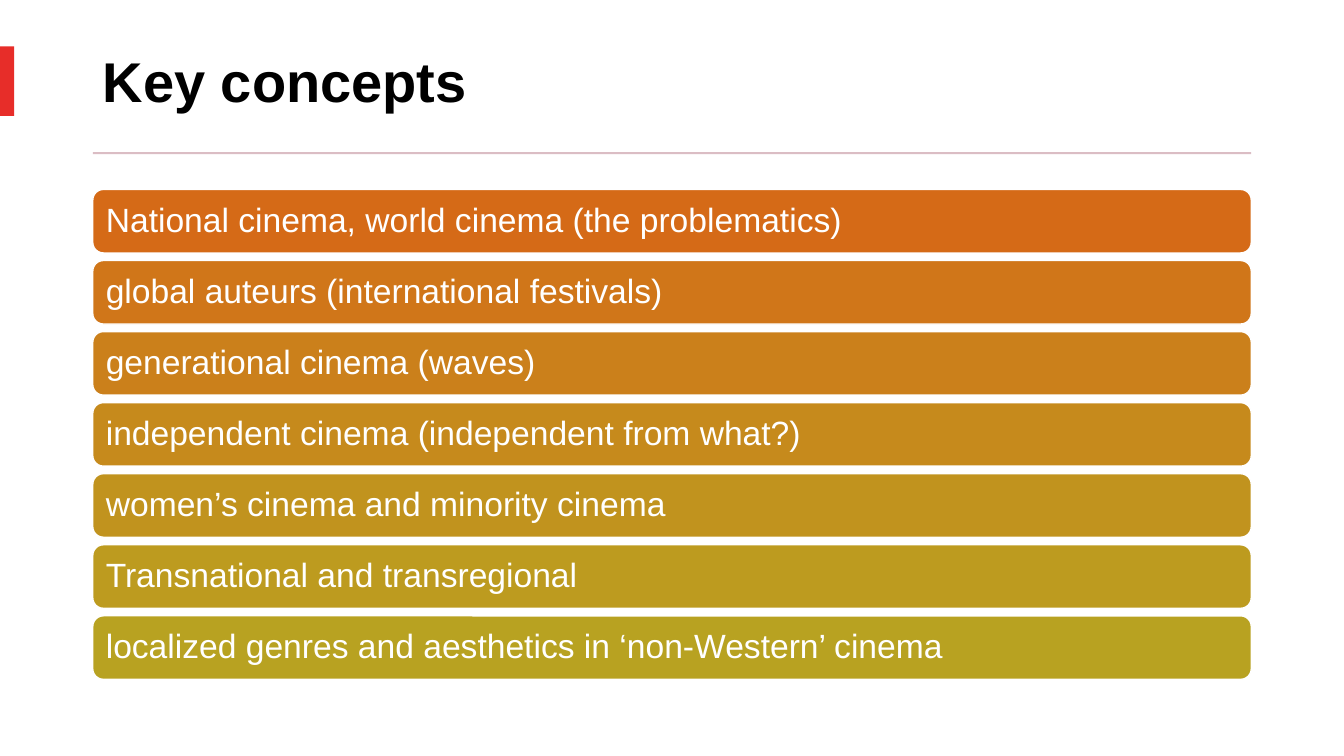
from pptx import Presentation
from pptx.dml.color import RGBColor
from pptx.enum.shapes import MSO_SHAPE
from pptx.enum.text import MSO_ANCHOR
from pptx.util import Inches, Pt

SLIDE_WIDTH, SLIDE_HEIGHT = 13.33, 7.5
COLUMN_LEFT, COLUMN_WIDTH = 0.92, 11.49
FIRST_BAR_TOP, BAR_PITCH, BAR_HEIGHT = 1.88, 0.705, 0.63

COLORS = {
    "title": "000000",
    "accent": "E72D29",
    "rule": "DBBDC4",
    "white": "FFFFFF",
}

# Each concept with the fill of its bar, from orange to olive
CONCEPTS = {
    "National cinema, world cinema (the problematics)": "D56A17",
    "global auteurs (international festivals)": "D07619",
    "generational cinema (waves)": "CB801B",
    "independent cinema (independent from what?)": "C68A1C",
    "women’s cinema and minority cinema": "C1931E",
    "Transnational and transregional": "BD9B1F",
    "localized genres and aesthetics in ‘non-Western’ cinema": "B8A221",
}

TITLE_FONT = {"name": "Arial", "size": Pt(40), "bold": True}
CONCEPT_FONT = {"name": "Arial", "size": Pt(24), "bold": False}
FRAME_FORMAT = {
    "word_wrap": True,
    "vertical_anchor": MSO_ANCHOR.MIDDLE,
    "margin_left": Inches(0.1),
    "margin_right": Inches(0.1),
}


def set_attributes(target, values):
    for name, value in values.items():
        setattr(target, name, value)


def write_text(shape, text, font, color):
    set_attributes(shape.text_frame, FRAME_FORMAT)
    paragraph = shape.text_frame.paragraphs[0]
    paragraph.line_spacing = 0.9
    run = paragraph.add_run()
    run.text = text
    set_attributes(run.font, font)
    run.font.color.rgb = RGBColor.from_string(color)


def add_block(slide, preset, left, top, width, height, fill):
    shape = slide.shapes.add_shape(
        preset, Inches(left), Inches(top), Inches(width), Inches(height))
    shape.shadow.inherit = False
    shape.fill.solid()
    shape.fill.fore_color.rgb = RGBColor.from_string(fill)
    shape.line.fill.background()
    return shape


def add_title(slide, text):
    title = slide.shapes.add_textbox(
        Inches(COLUMN_LEFT), Inches(0.29), Inches(COLUMN_WIDTH), Inches(1.1))
    write_text(title, text, TITLE_FONT, COLORS["title"])


def add_concept_bar(slide, row, text, fill):
    bar = add_block(slide, MSO_SHAPE.ROUNDED_RECTANGLE, COLUMN_LEFT,
                    FIRST_BAR_TOP + row * BAR_PITCH,
                    COLUMN_WIDTH, BAR_HEIGHT, fill)
    bar.line.color.rgb = RGBColor.from_string(COLORS["white"])
    bar.line.width = Pt(1)
    write_text(bar, text, CONCEPT_FONT, COLORS["white"])
    bar.text_frame.paragraphs[0].alignment = 1  # left


def main():
    presentation = Presentation()
    presentation.slide_width = Inches(SLIDE_WIDTH)
    presentation.slide_height = Inches(SLIDE_HEIGHT)
    slide = presentation.slides.add_slide(presentation.slide_layouts[6])

    # Heading with its edge marker and rule
    add_title(slide, "Key concepts")
    add_block(slide, MSO_SHAPE.RECTANGLE, 0, 0.46, 0.14, 0.69,
              COLORS["accent"])
    add_block(slide, MSO_SHAPE.RECTANGLE, COLUMN_LEFT, 1.51, COLUMN_WIDTH,
              0.02, COLORS["rule"])

    # Stack of concept bars
    for row, (text, fill) in enumerate(CONCEPTS.items()):
        add_concept_bar(slide, row, text, fill)

    presentation.save("out.pptx")


if __name__ == "__main__":
    main()
